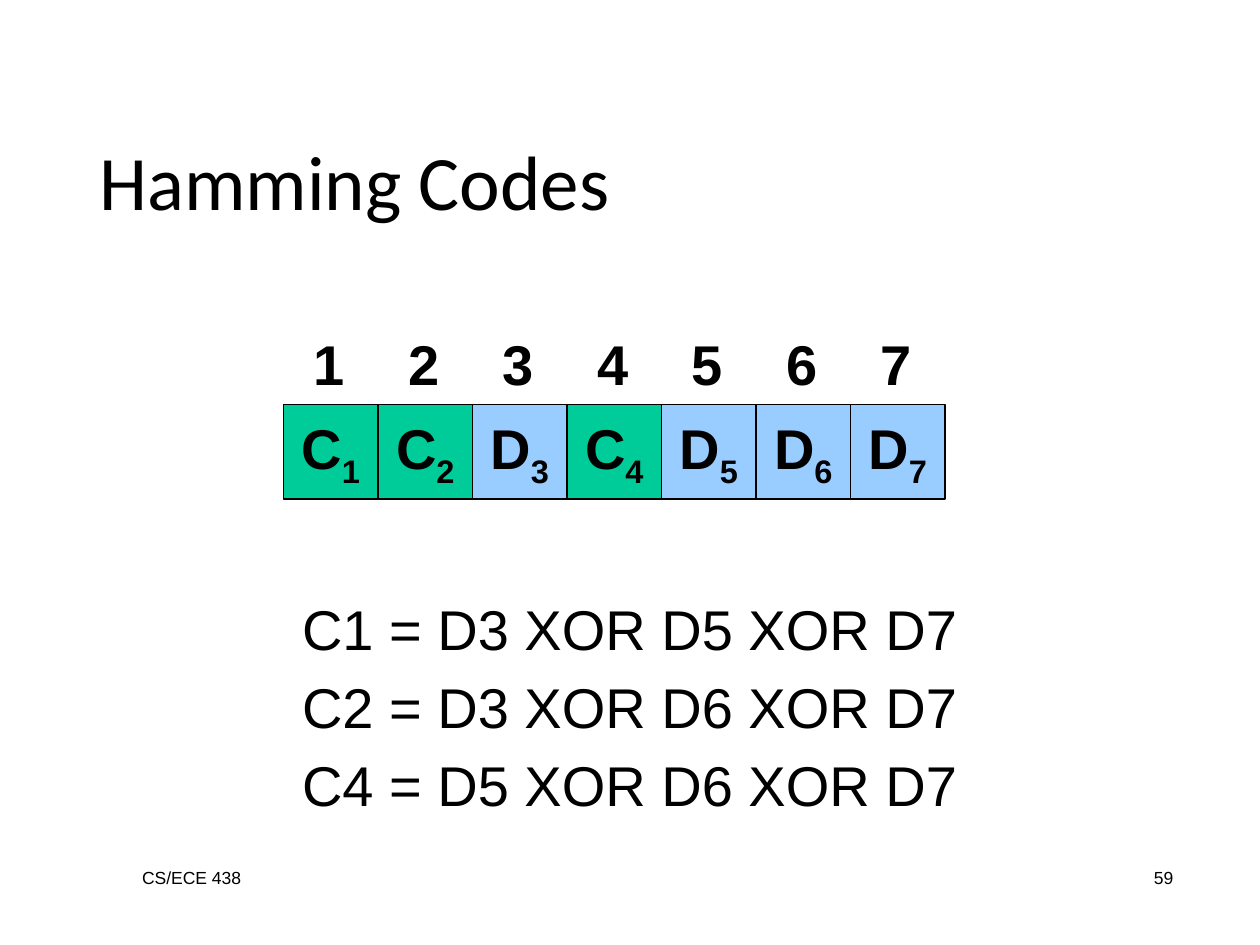
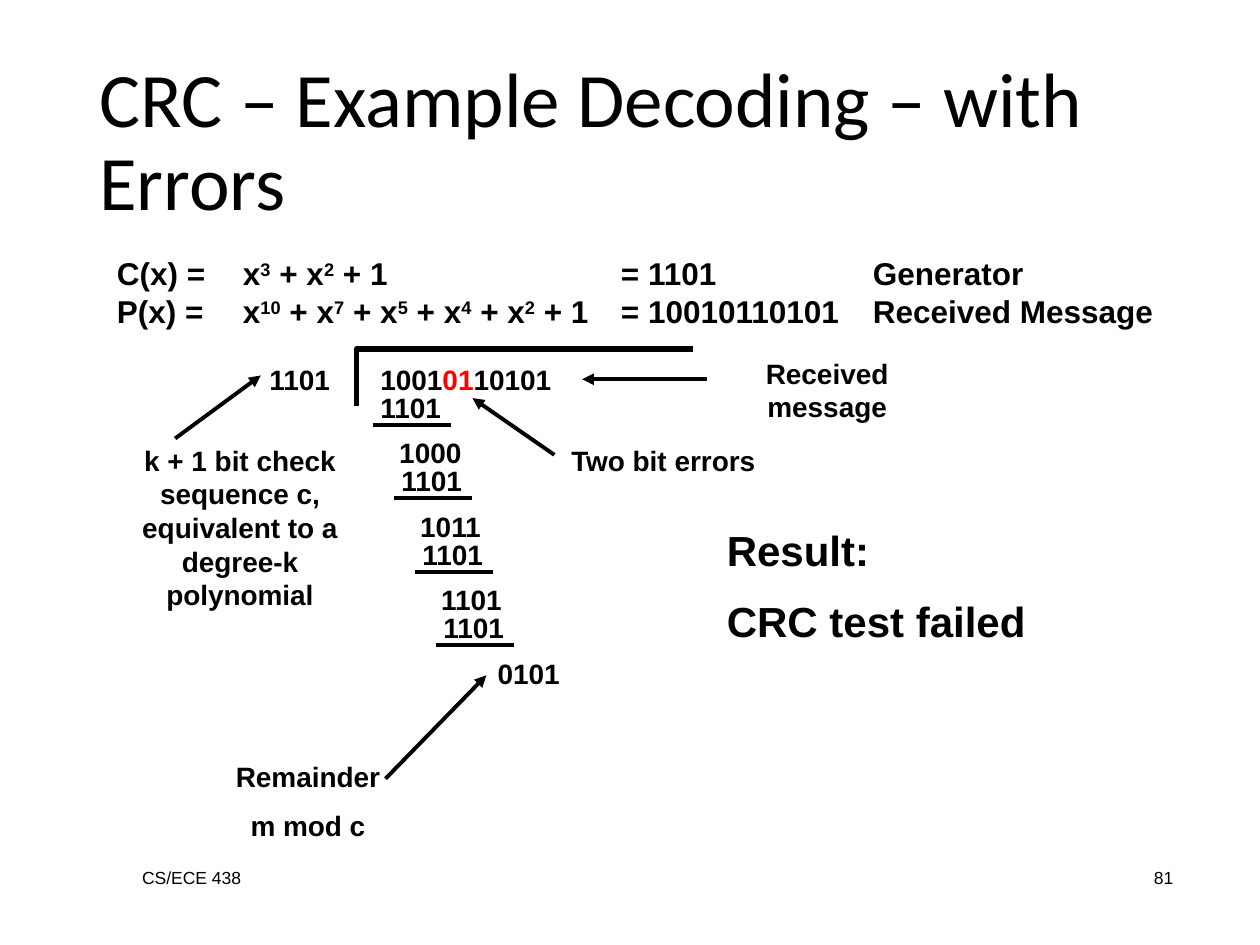
from lxml.etree import SubElement
from pptx import Presentation
from pptx.dml.color import RGBColor
from pptx.enum.shapes import MSO_CONNECTOR, MSO_SHAPE
from pptx.enum.text import MSO_ANCHOR, PP_ALIGN
from pptx.oxml.ns import qn
from pptx.util import Inches, Pt

BLACK = RGBColor(0x00, 0x00, 0x00)
RED = RGBColor(0xFF, 0x00, 0x00)
CHECK_GREEN = RGBColor(0x00, 0xCC, 0x99)
DATA_BLUE = RGBColor(0x99, 0xCC, 0xFF)
LEFT, CENTER, RIGHT = PP_ALIGN.LEFT, PP_ALIGN.CENTER, PP_ALIGN.RIGHT
SUBSCRIPT, SUPERSCRIPT = -25, 30


def add_text(slide, box, paragraphs, size=16, bold=True, align=LEFT, font="Arial",
             gap=0, fill=None, wrap=True, anchor=MSO_ANCHOR.TOP):
    """Add a text box, or a filled rectangle; a run is text or (text, baseline, colour)."""
    box = [Inches(length) for length in box]
    if fill is None:
        shape = slide.shapes.add_textbox(*box)
    else:
        shape = slide.shapes.add_shape(MSO_SHAPE.RECTANGLE, *box)
        shape.shadow.inherit = False
        shape.fill.solid()
        shape.fill.fore_color.rgb = fill
        shape.line.color.rgb = BLACK
        shape.line.width = Pt(0.75)
    frame = shape.text_frame
    frame.word_wrap = wrap
    frame.vertical_anchor = anchor
    for index, runs in enumerate(paragraphs):
        paragraph = frame.add_paragraph() if index else frame.paragraphs[0]
        paragraph.alignment = align
        if index and gap:
            paragraph.space_before = Pt(gap)
        for item in [runs] if isinstance(runs, str) else runs:
            text, baseline, colour = (item, 0, BLACK) if isinstance(item, str) else item
            run = paragraph.add_run()
            run.text = text
            run.font.name = font
            run.font.size = Pt(size)
            run.font.bold = bold
            run.font.color.rgb = colour
            if baseline:
                run._r.get_or_add_rPr().set("baseline", str(baseline * 1000))
    return shape


def add_line(slide, start, end, arrow=False):
    line = slide.shapes.add_connector(
        MSO_CONNECTOR.STRAIGHT, *[Inches(length) for length in (*start, *end)])
    line.line.color.rgb = BLACK
    line.line.width = Pt(2.25)
    if arrow:
        SubElement(line.line._get_or_add_ln(), qn("a:tailEnd"), type="triangle")
    SubElement(line._element.spPr, qn("a:effectLst"))


presentation = Presentation()
presentation.slide_width = Inches(10)
presentation.slide_height = Inches(7.5)

# Title and footer on both slides
slides = []
for title, number in (("Hamming Codes", "59"),
                      ("CRC – Example Decoding – with Errors", "81")):
    slide = presentation.slides.add_slide(presentation.slide_layouts[6])
    add_text(slide, (1.03, 6.83, 2.08, 0.5), ["CS/ECE 438"], 10, False)
    add_text(slide, (7.33, 6.83, 2.08, 0.5), [number], 10, False, RIGHT)
    heading = add_text(slide, (0.69, 0.4, 8.62, 1.45), [title], 44, False,
                       font="Calibri", anchor=MSO_ANCHOR.BOTTOM)
    heading.text_frame.paragraphs[0].line_spacing = 0.9
    slides.append(slide)
hamming, crc = slides

# Hamming code word: one cell per bit
CELL = 0.75
for column, kind in enumerate("CCDCDDD"):
    left = 2.25 + column * CELL
    position = str(column + 1)
    add_text(hamming, (left, 3.21, CELL, CELL), [[kind, (position, SUBSCRIPT, BLACK)]],
             32, align=CENTER, wrap=False, anchor=MSO_ANCHOR.MIDDLE,
             fill=CHECK_GREEN if kind == "C" else DATA_BLUE)
    add_text(hamming, (left + 0.14, 2.57, 0.45, 0.63), [position],
             32, align=CENTER, wrap=False)

add_text(hamming, (0.75, 4.67, 8.5, 1.42),
         ["C1 = D3 XOR D5 XOR D7", "C2 = D3 XOR D6 XOR D7", "C4 = D5 XOR D6 XOR D7"],
         32, False, CENTER, gap=6)

# Generator and received polynomials, aligned on tab stops
polynomials = []
for name, powers, bits, meaning in (
        ("C(x) = ", (3, 2), "= 1101", "Generator"),
        ("P(x) = ", (10, 7, 5, 4, 2), "= 10010110101", "Received Message")):
    runs = [name + "\t"]
    for index, power in enumerate(powers):
        runs += [" + x" if index else "x", (str(power), SUPERSCRIPT, BLACK)]
    polynomials.append(runs + [f" + 1\t{bits}\t{meaning}"])
definitions = add_text(crc, (0.83, 1.97, 8.5, 0.7), polynomials, 18)
for paragraph in definitions.text_frame.paragraphs:
    tabs = SubElement(paragraph._p.get_or_add_pPr(), qn("a:tabLst"))
    for stop in (1, 4, 6):
        SubElement(tabs, qn("a:tab"), pos=str(Inches(stop)), algn="l")

# Long division
bracket_left, bracket_top = Inches(2.83), Inches(2.77)
builder = crc.shapes.build_freeform(bracket_left, Inches(3.22))
builder.add_line_segments(
    [(bracket_left, bracket_top), (Inches(5.5), bracket_top)], close=False)
bracket = builder.convert_to_shape()
bracket.shadow.inherit = False
bracket.fill.background()
bracket.line.color.rgb = BLACK
bracket.line.width = Pt(3)

BITS_WIDTH, BITS_HEIGHT = 2.42, 0.37
DIVISION_LEFT, DIVISION_TOP = 2.92, 2.83
STEP_RIGHT, STEP_DOWN = 1 / 6, 7 / 12
add_text(crc, (2.04, DIVISION_TOP, 1.08, BITS_HEIGHT), ["1101"])
add_text(crc, (DIVISION_LEFT, DIVISION_TOP, BITS_WIDTH, BITS_HEIGHT),
         [["1001", ("01", 0, RED), "10101"]])
for step, difference in enumerate(("1000", "1011", "1101", "0101")):
    left = DIVISION_LEFT + step * STEP_RIGHT
    top = DIVISION_TOP + 0.22 + step * STEP_DOWN
    add_text(crc, (left, top, BITS_WIDTH, BITS_HEIGHT), ["1101"])
    add_line(crc, (left + 0.04, top + 0.32), (left + 0.66, top + 0.32))
    shift = 0.43 if difference == "0101" else 0.15
    add_text(crc, (left + shift, top + 0.36, BITS_WIDTH, BITS_HEIGHT), [difference])

# Explanations and their arrows
LABEL_WIDTH = 1.97
for left, top, height, label, start, end in (
        (0.92, 3.47, 1.44,
         ["k + 1 bit check sequence c, equivalent to a degree-k polynomial"],
         (1.39, 3.48), (2.07, 2.98)),
        (1.46, 5.98, 0.77, ["Remainder", "m mod c"], (3.06, 6.18), (3.86, 5.36)),
        (5.58, 2.78, 0.64, ["Received message"], (5.61, 3.01), (4.62, 3.01)),
        (4.28, 3.47, 0.37, ["Two bit errors"], (4.4, 3.61), (3.75, 3.16))):
    add_text(crc, (left, top, LABEL_WIDTH, height), label, align=CENTER, gap=8.5)
    add_line(crc, start, end, arrow=True)

add_text(crc, (5.67, 4.11, 3.43, 1.1), ["Result:", "CRC test failed"], 24, gap=12)

presentation.save("out.pptx")
